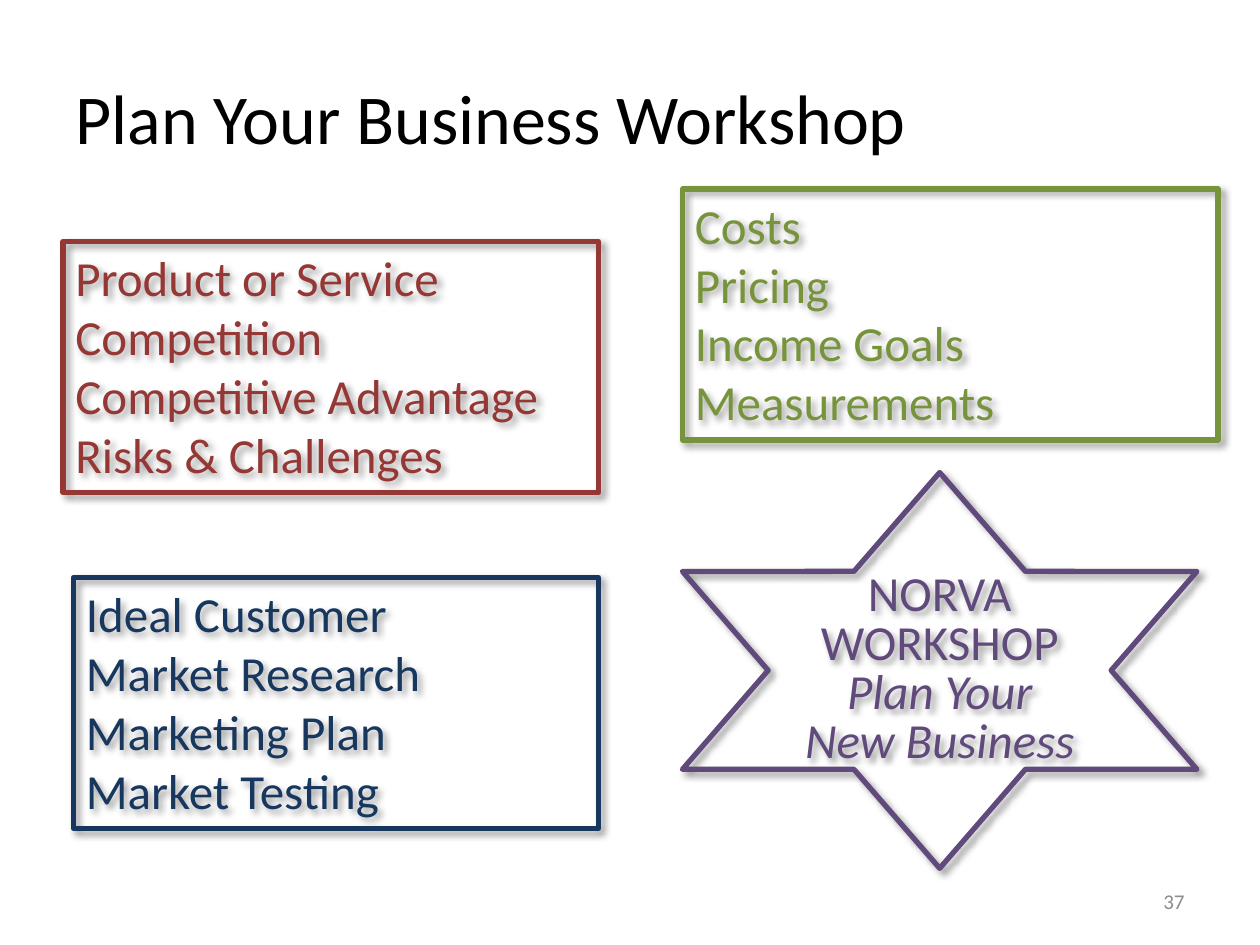
from lxml import etree
from pptx import Presentation
from pptx.dml.color import RGBColor
from pptx.enum.shapes import MSO_SHAPE
from pptx.enum.text import MSO_ANCHOR, MSO_AUTO_SIZE, PP_ALIGN
from pptx.oxml.ns import qn
from pptx.util import Inches, Pt

RECT, STAR = MSO_SHAPE.RECTANGLE, MSO_SHAPE.STAR_6_POINT
TOP, MIDDLE = MSO_ANCHOR.TOP, MSO_ANCHOR.MIDDLE
LEFT, CENTER, RIGHT = PP_ALIGN.LEFT, PP_ALIGN.CENTER, PP_ALIGN.RIGHT
FIT_SHAPE, NO_FIT = MSO_AUTO_SIZE.SHAPE_TO_FIT_TEXT, MSO_AUTO_SIZE.NONE
COLUMNS, ROWS = 120, 90


def rgb(value):
    return RGBColor.from_string(value)


class SlideBuilder:
    """Holds the style and the current slide; lengths are grid columns and rows."""

    font = "Calibri"
    body_size = 28
    outline = 3

    def __init__(self, prs):
        self.column = prs.slide_width / COLUMNS
        self.row = prs.slide_height / ROWS
        self.slide = prs.slides.add_slide(prs.slide_layouts[5])

    def box(self, left, top, width, height):
        return [round(n) for n in (left * self.column, top * self.row,
                                   width * self.column, height * self.row)]

    def set_text(self, sp, lines, size, color, align=LEFT, anchor=TOP, spacing=None):
        tf = sp.text_frame
        tf.word_wrap = True
        tf.vertical_anchor = anchor
        tf.text = "\n".join(lines)
        for p in tf.paragraphs:
            p.alignment = align
            if spacing:
                p.line_spacing = Pt(spacing)
            for r in p.runs:
                r.font.name = self.font
                r.font.size = Pt(size)
                r.font.color.rgb = rgb(color)

    def title(self, text, *place):
        sp = self.slide.shapes.title
        sp.left, sp.top, sp.width, sp.height = self.box(*place)
        self.set_text(sp, [text], 40, "000000", anchor=MIDDLE)
        sp.text_frame.auto_size = NO_FIT

    def page_number(self, text, *place):
        sp = self.slide.shapes.add_textbox(*self.box(*place))
        self.set_text(sp, [text], 12, "8C8C8C", RIGHT, MIDDLE)

    def add_shadow(self, sp):
        sp.shadow.inherit = False
        effects = sp._element.spPr.find(qn("a:effectLst"))
        shadow = etree.SubElement(
            effects, qn("a:outerShdw"), blurRad=str(Pt(4)), dist=str(Pt(3)),
            dir=str(45 * 60000), algn="tl", rotWithShape="0")
        color = etree.SubElement(shadow, qn("a:srgbClr"), val="000000")
        etree.SubElement(color, qn("a:alpha"), val="40000")

    def outlined(self, kind, place, color, lines, **text_style):
        sp = self.slide.shapes.add_shape(kind, *self.box(*place))
        sp.fill.background()
        sp.line.color.rgb = rgb(color)
        sp.line.width = Pt(self.outline)
        self.add_shadow(sp)
        self.set_text(sp, lines, self.body_size, color, **text_style)
        return sp

    def topic_box(self, left, top, width, color, lines):
        sp = self.outlined(RECT, (left, top, width, 23.9), color, lines)
        sp.text_frame.auto_size = FIT_SHAPE

    def star(self, place, color, heading, tagline):
        sp = self.outlined(STAR, place, color, [heading, *tagline],
                           align=CENTER, anchor=MIDDLE, spacing=28)
        for p in sp.text_frame.paragraphs[1:]:
            for r in p.runs:
                r.font.italic = True


def main():
    prs = Presentation()
    prs.slide_width, prs.slide_height = Inches(10), Inches(7.5)
    s = SlideBuilder(prs)

    # Title and page number
    s.title("Plan Your Business Workshop", 6, 3.6, 108, 15)
    s.page_number("37", 86, 83.4, 28, 4.8)

    # Topic boxes: left, top, width, colour, lines
    topics = [
        (6, 23, 51, "953735", ["Product or Service", "Competition",
                               "Competitive Advantage", "Risks & Challenges"]),
        (7, 55, 50, "17375E", ["Ideal Customer", "Market Research",
                               "Marketing Plan", "Market Testing"]),
        (65, 18, 51, "77933C", ["Costs", "Pricing", "Income Goals",
                                "Measurements"]),
    ]
    for topic in topics:
        s.topic_box(*topic)

    # Workshop star
    s.star((65, 45, 49, 37.7), "604A7B", "NORVA WORKSHOP",
           ["Plan Your", "New Business"])

    prs.save("out.pptx")


if __name__ == "__main__":
    main()
